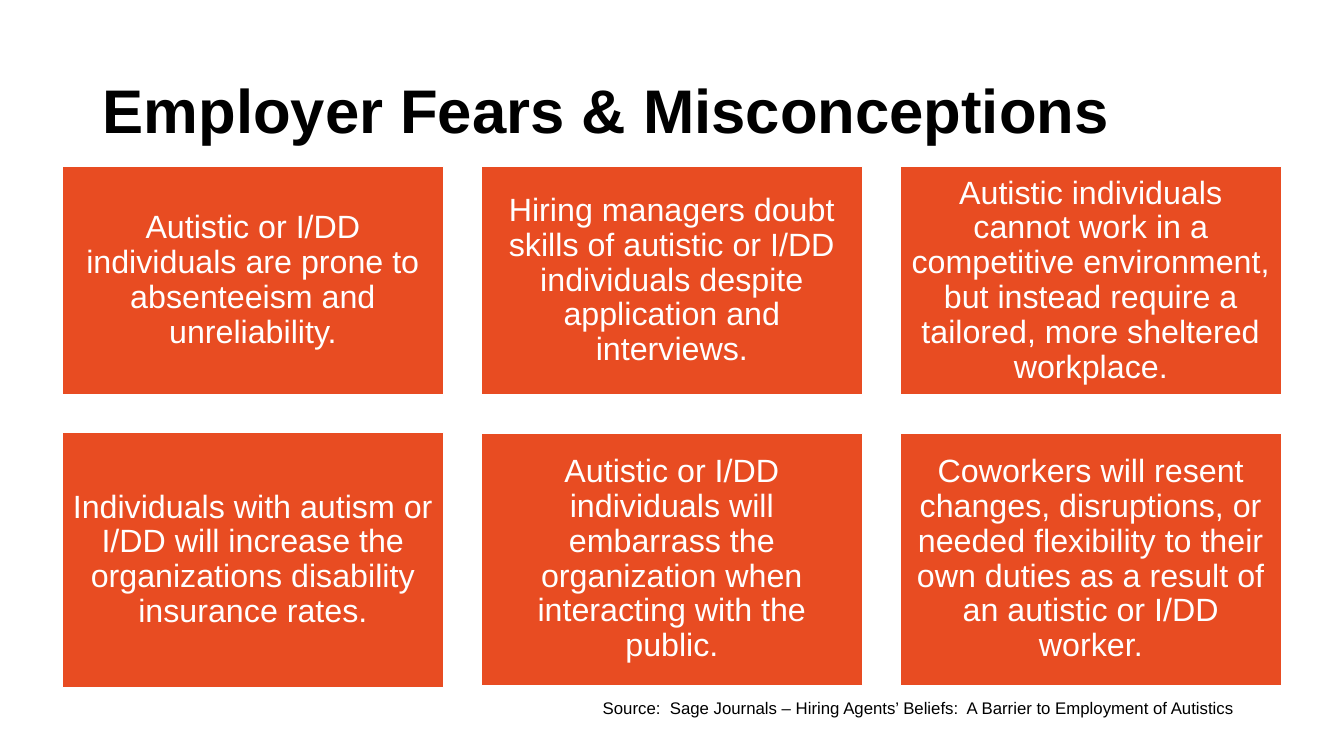
import pptx
import pptx.dml.color
import pptx.enum.shapes
import pptx.enum.text
import pptx.util

Inches = pptx.util.Inches
Pt = pptx.util.Pt
Align = pptx.enum.text.PP_ALIGN
Anchor = pptx.enum.text.MSO_ANCHOR

COLOURS = {"card": "E84C22", "white": "FFFFFF", "ink": "000000"}
GRID_LEFT, GRID_RIGHT, CARD_WIDTH = 0.62, 12.71, 3.78
FEARS = [
    [
        (1.65, 2.27, "Autistic or I/DD individuals are prone to absenteeism and unreliability."),
        (1.65, 2.27, "Hiring managers doubt skills of autistic or I/DD individuals despite "
                     "application and interviews."),
        (1.65, 2.27, "Autistic individuals cannot work in a competitive environment, but "
                     "instead require a tailored, more sheltered workplace."),
    ],
    [
        (4.29, 2.53, "Individuals with autism or I/DD will increase the organizations "
                     "disability insurance rates."),
        (4.3, 2.5, "Autistic or I/DD individuals will embarrass the organization when "
                   "interacting with the public."),
        (4.3, 2.5, "Coworkers will resent changes, disruptions, or needed flexibility to "
                   "their own duties as a result of an autistic or I/DD worker."),
    ],
]


def colour(name):
    return pptx.dml.color.RGBColor.from_string(COLOURS[name])


def write(frame, text, size, ink, align=Align.LEFT, spacing=1.0, bold=False):
    frame.word_wrap = True
    para = frame.paragraphs[0]
    para.alignment = align
    para.line_spacing = spacing
    span = para.add_run()
    span.text = text
    span.font.name = "Arial"
    span.font.size = Pt(size)
    span.font.bold = bold
    span.font.color.rgb = colour(ink)


def add_title(page, text):
    title = page.shapes.title
    title.left, title.top = Inches(0.92), Inches(0.4)
    title.width, title.height = Inches(11.5), Inches(1.45)
    title.text_frame.vertical_anchor = Anchor.MIDDLE
    write(title.text_frame, text, 44, "ink", spacing=0.9, bold=True)


def add_card(page, left, top, height, text):
    card = page.shapes.add_shape(
        pptx.enum.shapes.MSO_SHAPE.RECTANGLE,
        Inches(left), Inches(top), Inches(CARD_WIDTH), Inches(height))
    card.shadow.inherit = False
    card.fill.solid()
    card.fill.fore_color.rgb = colour("card")
    card.line.color.rgb = colour("white")
    card.line.width = Pt(1)
    frame = card.text_frame
    frame.margin_left = frame.margin_right = Inches(0.1)
    frame.margin_top = frame.margin_bottom = Inches(0.1)
    frame.vertical_anchor = Anchor.MIDDLE
    write(frame, text, 23, "white", Align.CENTER, 0.9)


def add_source(page, text):
    box = page.shapes.add_textbox(Inches(5.88), Inches(6.87), Inches(7.2), Inches(0.3))
    write(box.text_frame, text, 12, "ink")


def main():
    deck = pptx.Presentation()
    deck.slide_width, deck.slide_height = Inches(13.33), Inches(7.5)
    page = deck.slides.add_slide(deck.slide_layouts.get_by_name("Title Only"))
    add_title(page, "Employer Fears & Misconceptions")
    for row in FEARS:
        step = (GRID_RIGHT - GRID_LEFT - CARD_WIDTH) / (len(row) - 1)
        for column, (top, height, text) in enumerate(row):
            add_card(page, GRID_LEFT + column * step, top, height, text)
    add_source(page, "Source:  Sage Journals – Hiring Agents’ Beliefs:  "
                     "A Barrier to Employment of Autistics")
    deck.save("out.pptx")


if __name__ == "__main__":
    main()
